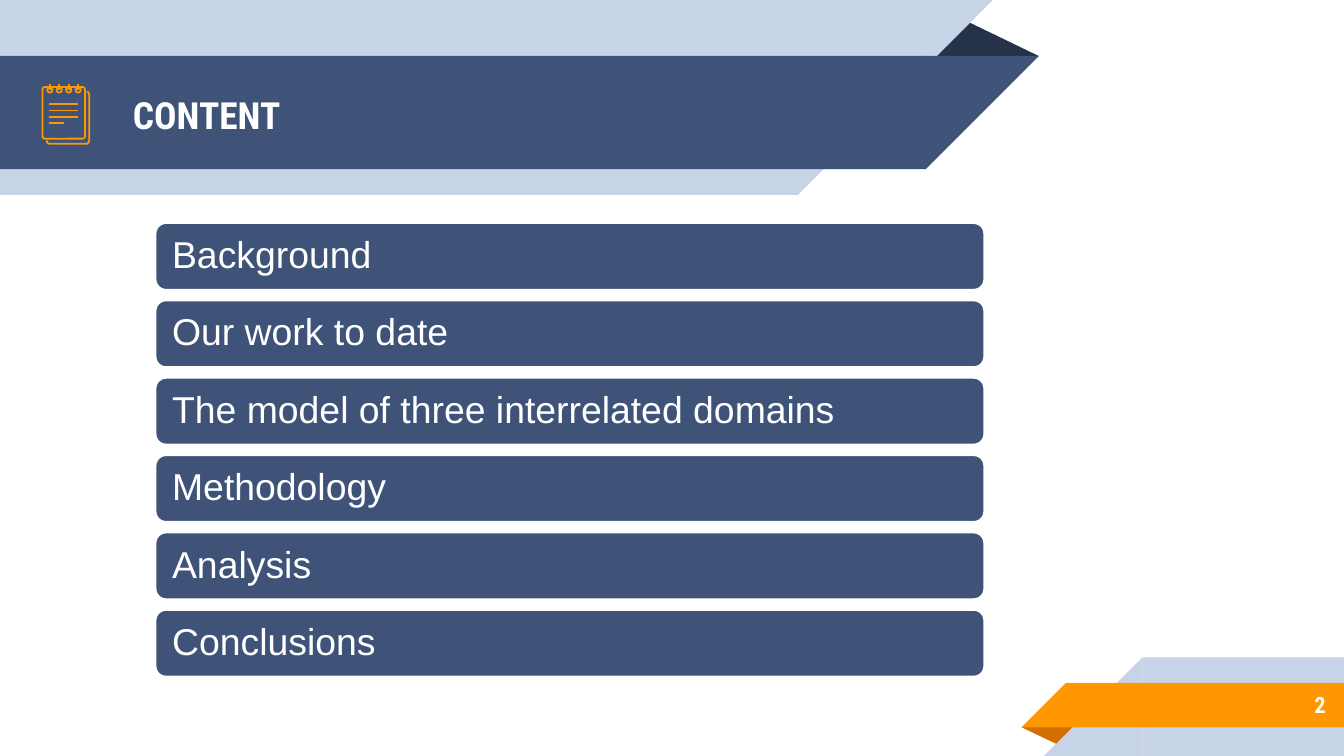
import pptx
import pptx.dml.color
import pptx.enum.shapes
import pptx.enum.text
import pptx.oxml.ns
import pptx.util
from lxml import etree

Pt = pptx.util.Pt
SHAPES = pptx.enum.shapes.MSO_SHAPE
ALIGN = pptx.enum.text.PP_ALIGN

COLORS = {
    "navy": "3F5378",
    "dark": "263248",
    "pale": "C7D3E6",
    "orange": "FF9800",
    "rust": "D26F00",
    "white": "FFFFFF",
}
TOPICS = [
    "Background",
    "Our work to date",
    "The model of three interrelated domains",
    "Methodology",
    "Analysis",
    "Conclusions",
]
ICON_LINE = 0.96


def color(name):
    return pptx.dml.color.RGBColor.from_string(COLORS[name])


def set_line(shape, name, width):
    shape.line.color.rgb = color(name)
    shape.line.width = Pt(width)


def add_filled(slide, kind, left, top, width, height, fill, rotation=0):
    shape = slide.shapes.add_shape(kind, Pt(left), Pt(top), Pt(width), Pt(height))
    shape.shadow.inherit = False
    shape.fill.solid()
    shape.fill.fore_color.rgb = color(fill)
    shape.line.fill.background()
    shape.rotation = rotation
    return shape


def add_fold(slide, left, top, width, height, fill, rotation=0):
    fold = add_filled(slide, SHAPES.ISOSCELES_TRIANGLE, left, top, width, height, fill, rotation)
    fold.adjustments[0] = 0.324


def add_header_band(slide, top, width, height, fill):
    """Band from the left edge whose right end slants inwards going down."""
    add_filled(slide, SHAPES.RECTANGLE, 0, top, width, height, fill)
    add_filled(slide, SHAPES.RIGHT_TRIANGLE, width, top, height, height, fill, 90)


def add_footer_band(slide, left, top, height, fill):
    """Band to the right edge whose left end slants outwards going down."""
    add_filled(slide, SHAPES.RECTANGLE, left, top, 720 - left, height, fill)
    add_filled(slide, SHAPES.RIGHT_TRIANGLE, left - height, top, height, height, fill, 270)


def write_text(shape, text, size, font, inset, align=ALIGN.LEFT, bold=False):
    frame = shape.text_frame
    frame.word_wrap = True
    frame.vertical_anchor = pptx.enum.text.MSO_ANCHOR.MIDDLE
    frame.margin_left = frame.margin_right = Pt(inset)
    frame.margin_top = frame.margin_bottom = Pt(inset)
    paragraph = frame.paragraphs[0]
    paragraph.text = text
    paragraph.alignment = align
    paragraph.font.size = Pt(size)
    paragraph.font.name = font
    paragraph.font.bold = bold
    paragraph.font.color.rgb = color("white")
    return paragraph


def add_label(slide, left, top, width, height, text, size, align=ALIGN.LEFT):
    box = slide.shapes.add_textbox(Pt(left), Pt(top), Pt(width), Pt(height))
    write_text(box, text, size, "Roboto Condensed", 7.2, align, bold=True)


def add_topic(slide, top, text):
    bar = add_filled(slide, SHAPES.ROUNDED_RECTANGLE, 82.8, top, 445, 36.8, "navy")
    set_line(bar, "white", 2)
    paragraph = write_text(bar, text, 20, "Arial", 7.6)
    paragraph.line_spacing = 0.9


def add_icon_outline(slide, kind, left, top, width, height):
    shape = add_filled(slide, kind, left, top, width, height, "orange")
    shape.fill.background()
    set_line(shape, "orange", ICON_LINE)
    return shape


def add_icon_line(slide, x1, y1, x2, y2):
    line = slide.shapes.add_connector(
        pptx.enum.shapes.MSO_CONNECTOR.STRAIGHT, Pt(x1), Pt(y1), Pt(x2), Pt(y2))
    set_line(line, "orange", ICON_LINE)
    etree.SubElement(line._element.spPr, pptx.oxml.ns.qn("a:effectLst"))


def add_back_page(slide):
    """Open outline of the page that peeks out behind the front one."""
    points = [(25, 75.3), (25.5, 76.6), (26.5, 77), (46.6, 77), (47.4, 76.5),
              (47.8, 75.6), (47.8, 50.4), (47.4, 49.5), (46.6, 49.3)]
    corners = [(Pt(x), Pt(y)) for x, y in points]
    builder = slide.shapes.build_freeform(*corners[0])
    builder.add_line_segments(corners[1:], close=False)
    page = builder.convert_to_shape()
    page.shadow.inherit = False
    page.fill.background()
    set_line(page, "orange", ICON_LINE)


def add_notepad(slide):
    add_back_page(slide)
    page = add_icon_outline(slide, SHAPES.ROUNDED_RECTANGLE, 22.8, 46.6, 22.8, 27.7)
    page.adjustments[0] = 0.06
    for index in range(4):
        x = 26.7 + 5.04 * index
        add_icon_outline(slide, SHAPES.OVAL, x - 1.4, 46.8, 2.8, 2.8)
        add_icon_line(slide, x, 45.1, x, 48.1)
    for index, width in enumerate([15.4, 15.4, 15.4, 8]):
        y = 55.9 + 3.35 * index
        add_icon_line(slide, 26.5, y, 26.5 + width, y)


def main():
    presentation = pptx.Presentation()
    presentation.slide_width = Pt(720)
    presentation.slide_height = Pt(405)
    slide = presentation.slides.add_slide(presentation.slide_layouts[6])

    add_fold(slide, 495.4, 10.1, 61.2, 20, "dark")
    add_header_band(slide, 0, 427.5, 104.4, "pale")
    add_header_band(slide, 30, 496, 60.6, "navy")

    add_fold(slide, 547.2, 389.6, 31, 10, "rust", 180)
    add_footer_band(slide, 612, 352.2, 52.8, "pale")
    add_footer_band(slide, 571, 365.9, 23.8, "orange")

    add_label(slide, 64.1, 31, 432.7, 60.5, "CONTENT", 20)
    add_label(slide, 599.8, 365, 117.4, 25.2, "2", 12, ALIGN.RIGHT)
    add_notepad(slide)

    for index, topic in enumerate(TOPICS):
        add_topic(slide, 119 + 41.45 * index, topic)

    presentation.save("out.pptx")


if __name__ == "__main__":
    main()
